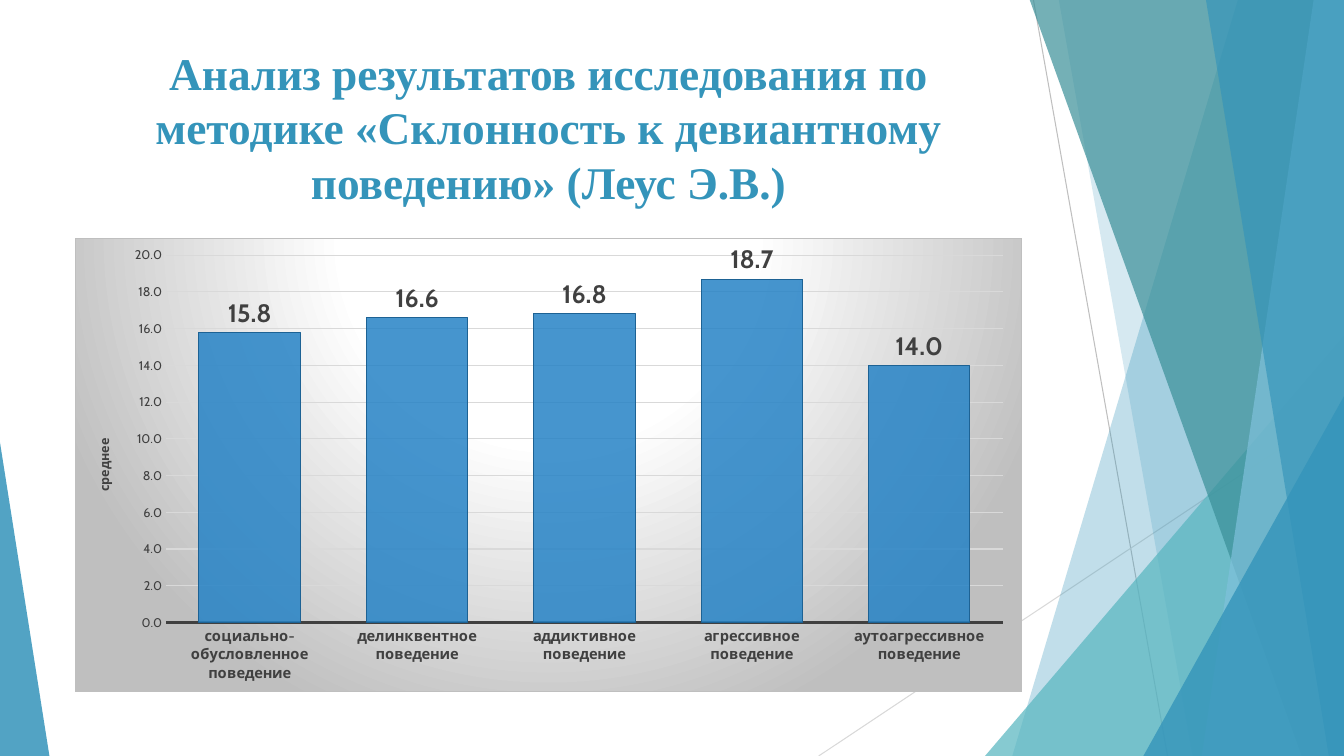
from lxml import etree
from pptx import Presentation
from pptx.chart.data import CategoryChartData
from pptx.dml.color import RGBColor
from pptx.enum import chart as kinds, shapes, text
from pptx.oxml import parse_xml
from pptx.oxml.ns import nsdecls, qn
from pptx.util import Inches, Pt

WIDTH, HEIGHT = 13.33, 7.5
TITLE = ("Анализ результатов исследования по методике "
         "«Склонность к девиантному поведению» (Леус Э.В.)")
AXIS_TITLE = "среднее"
SCORES = {
    "социально-обусловленное поведение": 15.8,
    "делинквентное поведение": 16.6,
    "аддиктивное поведение": 16.8,
    "агрессивное поведение": 18.7,
    "аутоагрессивное поведение": 14.0,
}
RAYS = [  # start, end, colour
    ((10.25, 0), (11.58, HEIGHT), "BFBFBF"),
    ((WIDTH, 4.03), (8.12, HEIGHT), "D9D9D9"),
]
# Bands reach the right edge: (top x, bottom x, colour, opacity %)
# Triangles: (left, top, width, apex, colour, opacity %)
FACETS = [
    (12.28, 10.04, "3494BA", 30),
    (10.5, 11.83, "3494BA", 20),
    (9.77, 3.33, 3.56, 1, "58B6C0", 72),
    (10.21, 12.91, "3A8F98", 70),
    (13.03, 11.92, "7FC1DB", 70),
    (11.96, 13.18, "3494BA", 65),
    (11.34, 3.93, 1.99, 1, "3494BA", 80),
    (0, 4.39, 0.49, 0, "3494BA", 85),
]
CONTENT_LEFT, CONTENT_WIDTH = 0.74, 9.4
PLOT = {"x": 0.096, "y": 0.037, "w": 0.884, "h": 0.81}  # shares of the chart


def rgb(code):
    return RGBColor.from_string(code)


def paint(fill, code, opacity):
    fill.solid()
    fill.fore_color.rgb = rgb(code)
    color = fill._xPr.find(f"{qn('a:solidFill')}/{qn('a:srgbClr')}")
    etree.SubElement(color, qn("a:alpha")).set("val", str(opacity * 1000))


def stroke(line, code, width):
    line.color.rgb = rgb(code)
    line.width = Pt(width)


def style(font, size, code, bold=False, name="Cabin"):
    font.size = Pt(size)
    font.bold = bold
    font.name = name
    font.color.rgb = rgb(code)


def add_ray(page, start, end, code):
    ray = page.shapes.add_connector(
        shapes.MSO_CONNECTOR.STRAIGHT, *map(Inches, start + end))
    stroke(ray.line, code, 0.75)
    etree.SubElement(ray._element.spPr, qn("a:effectLst"))


def add_band(page, top_x, bottom_x):
    outline = page.shapes.build_freeform(Inches(top_x), Inches(-0.01))
    corners = [(WIDTH, -0.01), (WIDTH, HEIGHT), (bottom_x, HEIGHT)]
    outline.add_line_segments([(Inches(x), Inches(y)) for x, y in corners])
    return outline.convert_to_shape()


def add_triangle(page, left, top, width, apex):
    triangle = page.shapes.add_shape(
        shapes.MSO_SHAPE.ISOSCELES_TRIANGLE,
        *map(Inches, (left, top, width, HEIGHT - top)))
    triangle.adjustments[0] = apex
    return triangle


def add_facet(page, *place, code, opacity):
    build = add_band if len(place) == 2 else add_triangle
    facet = build(page, *place)
    facet.shadow.inherit = False
    paint(facet.fill, code, opacity)
    facet.line.fill.background()


def add_title(page):
    box = page.shapes.add_textbox(
        *map(Inches, (CONTENT_LEFT, 0.39, CONTENT_WIDTH, 1.73)))
    frame = box.text_frame
    frame.word_wrap = True
    frame.vertical_anchor = text.MSO_ANCHOR.MIDDLE
    para = frame.paragraphs[0]
    para.alignment = text.PP_ALIGN.CENTER
    span = para.add_run()
    span.text = TITLE
    style(span.font, 32.4, "3494BA", True, "Times New Roman")


def set_background(chart):
    """Give the chart area its round gradient and border."""
    stops = "".join(
        f'<a:gs pos="{place * 1000}"><a:srgbClr val="{code}"/></a:gs>'
        for place, code in [(0, "FFFFFF"), (39, "FFFFFF"), (100, "BFBFBF")])
    area = parse_xml(
        f'<c:spPr {nsdecls("c", "a")}><a:gradFill><a:gsLst>{stops}</a:gsLst>'
        '<a:path path="circle"><a:fillToRect l="50000" t="-80000" r="50000" '
        'b="180000"/></a:path></a:gradFill><a:ln w="9525"><a:solidFill>'
        '<a:srgbClr val="BFBFBF"/></a:solidFill></a:ln></c:spPr>')
    chart.element.find(qn("c:chart")).addnext(area)


def set_plot_layout(chart):
    plot_area = chart.element.find(f"{qn('c:chart')}/{qn('c:plotArea')}")
    for old in plot_area.findall(qn("c:layout")):
        plot_area.remove(old)
    sizes = "".join(f'<c:{key} val="{share}"/>' for key, share in PLOT.items())
    plot_area.insert(0, parse_xml(
        f'<c:layout {nsdecls("c")}><c:manualLayout>'
        '<c:layoutTarget val="inner"/><c:xMode val="edge"/>'
        f'<c:yMode val="edge"/>{sizes}</c:manualLayout></c:layout>'))


def style_axes(chart):
    names, values = chart.category_axis, chart.value_axis
    for axis in (names, values):
        axis.major_tick_mark = axis.minor_tick_mark = kinds.XL_TICK_MARK.NONE
    names.has_major_gridlines = False
    style(names.tick_labels.font, 10.5, "404040", True)
    stroke(names.format.line, "404040", 1.5)

    values.minimum_scale, values.maximum_scale, values.major_unit = 0, 20, 2
    style(values.tick_labels.font, 9, "404040")
    values.tick_labels.number_format = "0.0"
    values.tick_labels.number_format_is_linked = False
    values.format.line.fill.background()
    stroke(values.major_gridlines.format.line, "D9D9D9", 0.75)
    span = values.axis_title.text_frame.paragraphs[0].add_run()
    span.text = AXIS_TITLE
    style(span.font, 9, "404040", True)


def style_columns(plot):
    plot.gap_width = 65
    plot.vary_by_categories = False
    columns = plot.series[0]
    columns.invert_if_negative = False
    paint(columns.format.fill, "2683C6", 85)
    stroke(columns.format.line, "1D6294", 0.75)
    labels = columns.data_labels
    labels.show_value = True
    labels.position = kinds.XL_LABEL_POSITION.OUTSIDE_END
    labels.number_format = "0.0"
    labels.number_format_is_linked = False
    style(labels.font, 18, "404040", True)


def add_scores(page):
    data = CategoryChartData(number_format="0.0")
    data.categories = list(SCORES)
    data.add_series("Series 1", list(SCORES.values()))
    chart = page.shapes.add_chart(
        kinds.XL_CHART_TYPE.COLUMN_CLUSTERED,
        *map(Inches, (CONTENT_LEFT, 2.36, CONTENT_WIDTH, 4.51)), data).chart
    chart.has_title = False
    chart.has_legend = False
    style(chart.font, 10, "000000")
    set_background(chart)
    set_plot_layout(chart)
    style_axes(chart)
    style_columns(chart.plots[0])


def main():
    deck = Presentation()
    deck.slide_width, deck.slide_height = Inches(WIDTH), Inches(HEIGHT)
    page = deck.slides.add_slide(deck.slide_layouts[6])
    for ray in RAYS:
        add_ray(page, *ray)
    for *place, code, opacity in FACETS:
        add_facet(page, *place, code=code, opacity=opacity)
    add_title(page)
    add_scores(page)
    deck.save("out.pptx")


if __name__ == "__main__":
    main()
